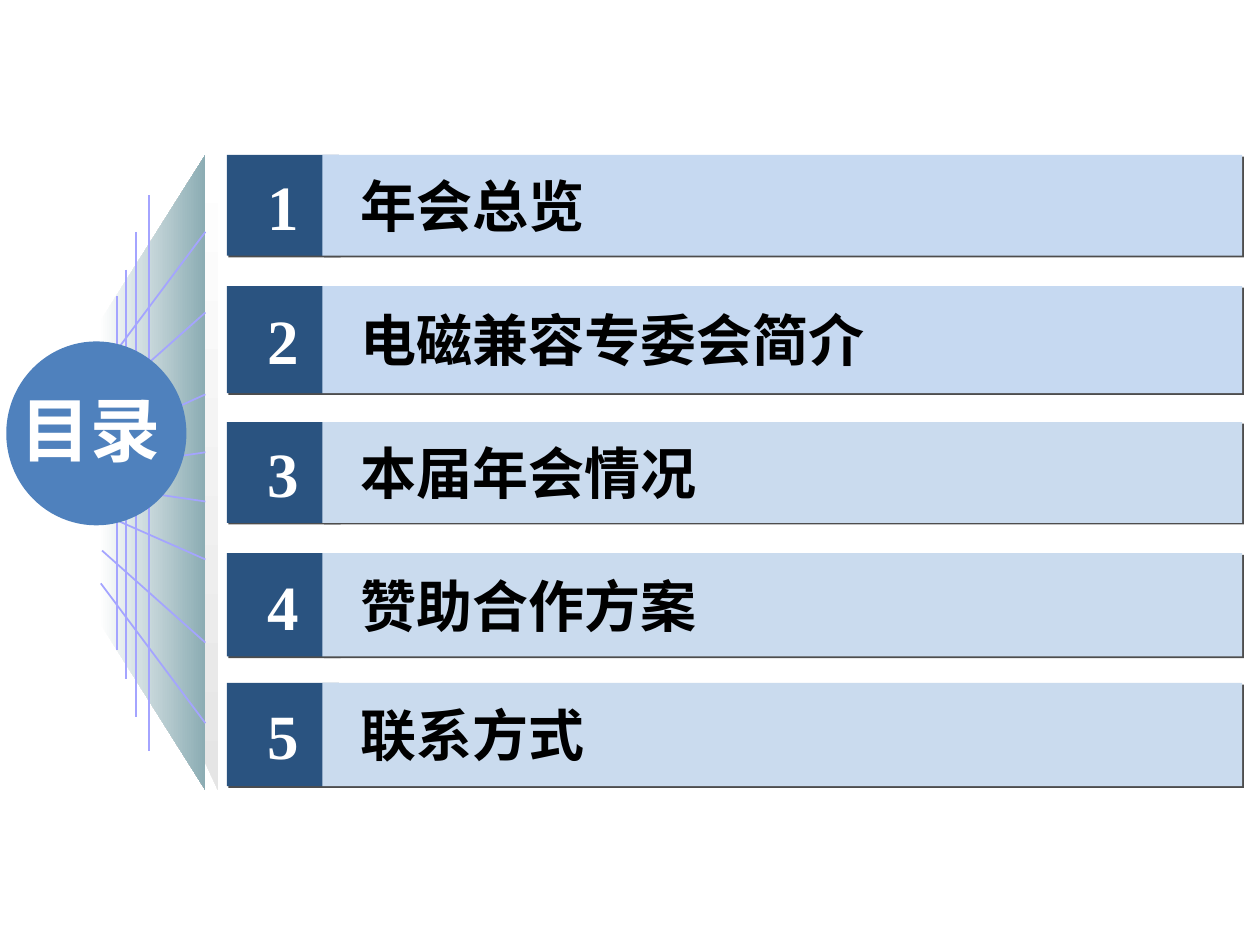
from dataclasses import dataclass

from lxml import etree
from pptx import Presentation
from pptx.dml.color import RGBColor
from pptx.enum.shapes import MSO_CONNECTOR, MSO_SHAPE
from pptx.enum.text import MSO_ANCHOR, MSO_AUTO_SIZE, PP_ALIGN
from pptx.oxml.ns import qn
from pptx.util import Inches, Pt

STRAIGHT = MSO_CONNECTOR.STRAIGHT
OVAL, RECTANGLE = MSO_SHAPE.OVAL, MSO_SHAPE.RECTANGLE
MIDDLE = MSO_ANCHOR.MIDDLE
LEFT, CENTER = PP_ALIGN.LEFT, PP_ALIGN.CENTER
GROW = MSO_AUTO_SIZE.SHAPE_TO_FIT_TEXT


@dataclass(frozen=True)
class Theme:
    white: str = "FFFFFF"
    black: str = "000000"
    navy: str = "2A5380"
    blue: str = "4F81BD"
    sky: str = "C6D9F1"
    mist: str = "CADBEE"
    teal: str = "8BACB3"
    silver: str = "E5E5E5"
    lilac: str = "A4A4FF"
    shadow: str = "4D4D4D"
    cjk_font: str = "Noto Sans CJK SC"
    number_font: str = "Times New Roman"
    title_size: int = 40
    number_size: int = 36
    item_size: int = 32


class SlideBuilder:
    def __init__(self, slide, theme):
        self.slide = slide
        self.theme = theme

    def set_text(self, text_frame, text, font_name, size, color, alignment):
        text_frame.word_wrap = False
        text_frame.text = text
        paragraph = text_frame.paragraphs[0]
        paragraph.alignment = alignment
        run = paragraph.runs[0]
        run.font.size = Pt(size)
        run.font.bold = True
        run.font.color.rgb = RGBColor.from_string(color)
        run.font.name = font_name
        east_asian = etree.SubElement(run._r.get_or_add_rPr(), qn("a:ea"))
        east_asian.set("typeface", font_name)
        return paragraph

    def shape(self, kind, left, top, width, height, color):
        shape = self.slide.shapes.add_shape(
            kind, Inches(left), Inches(top), Inches(width), Inches(height))
        shape.shadow.inherit = False
        shape.fill.solid()
        shape.fill.fore_color.rgb = RGBColor.from_string(color)
        shape.line.fill.background()
        return shape

    def shadow_box(self, left, top, width, height, color):
        shape = self.shape(RECTANGLE, left, top, width, height, color)
        shape.text_frame.vertical_anchor = MIDDLE
        effects = shape._element.spPr.find(qn("a:effectLst"))
        shadow = etree.SubElement(effects, qn("a:outerShdw"), blurRad="0",
                                  dist=str(Pt(1.4)), dir="2700000", algn="ctr",
                                  rotWithShape="0")
        etree.SubElement(shadow, qn("a:srgbClr"), val=self.theme.shadow)
        return shape

    def gradient_outline(self, points, colors, angle):
        corners = [(Inches(x), Inches(y)) for x, y in points]
        outline = self.slide.shapes.build_freeform(*corners[0], scale=1.0)
        outline.add_line_segments(corners[1:], close=True)
        shape = outline.convert_to_shape()
        shape.shadow.inherit = False
        shape.line.fill.background()
        shape.fill.gradient()
        shape.fill.gradient_angle = angle
        for position, (stop, color) in enumerate(zip(shape.fill.gradient_stops, colors)):
            stop.position = position
            stop.color.rgb = RGBColor.from_string(color)

    def line(self, x1, y1, x2, y2):
        connector = self.slide.shapes.add_connector(
            STRAIGHT, Inches(x1), Inches(y1), Inches(x2), Inches(y2))
        connector.line.color.rgb = RGBColor.from_string(self.theme.lilac)
        connector.line.width = Pt(1)
        etree.SubElement(connector._element.spPr, qn("a:effectLst"))

    def title(self, text, left, top, width, height):
        box = self.slide.shapes.add_textbox(
            Inches(left), Inches(top), Inches(width), Inches(height))
        self.set_text(box.text_frame, text, self.theme.cjk_font,
                      self.theme.title_size, self.theme.white, CENTER)
        box.text_frame.auto_size = GROW

    def agenda_row(self, number, text, top, height, color):
        theme = self.theme
        tab = self.shadow_box(1.8, top, 0.89, height, theme.navy)
        self.set_text(tab.text_frame, str(number), theme.number_font,
                      theme.number_size, theme.white, CENTER)
        bar = self.shadow_box(2.56, top, 7.3, height, color)
        paragraph = self.set_text(bar.text_frame, text, theme.cjk_font,
                                  theme.item_size, theme.black, LEFT)
        properties = paragraph._p.get_or_add_pPr()
        properties.set("marL", str(Inches(0.2)))
        properties.set("indent", "0")


def main():
    theme = Theme()
    presentation = Presentation()
    presentation.slide_width = Inches(10)
    presentation.slide_height = Inches(7.5)
    slide = presentation.slides.add_slide(presentation.slide_layouts[6])
    builder = SlideBuilder(slide, theme)

    # Folded panel: thin edge, then the face
    builder.gradient_outline([(1.73, 6.27), (1.6, 5.99), (1.6, 1.51), (1.73, 1.22)],
                             (theme.white, theme.silver), 270)
    builder.gradient_outline([(1.63, 6.27), (0.79, 4.94), (0.79, 2.56), (1.63, 1.23)],
                             (theme.white, theme.teal), 0)

    # Perspective grid: rays to the panel edge, then uprights
    panel_edge = 1.63
    rays = [(0.81, 3.21, 2.48), (0.77, 3.52, 3.13), (0.81, 3.71, 3.59),
            (0.81, 4.37, 5.1), (0.77, 4.06, 4.44), (0.81, 3.86, 3.98),
            (0.8, 2.95, 1.84), (0.8, 4.63, 5.74)]
    for start_x, start_y, edge_y in rays:
        builder.line(start_x, start_y, panel_edge, edge_y)
    uprights = [(1.18, 1.55, 5.96), (1.08, 1.84, 5.69),
                (1, 2.14, 5.39), (0.93, 2.35, 5.16)]
    for x, top, bottom in uprights:
        builder.line(x, top, x, bottom)

    # Title disc
    builder.shape(OVAL, 0.05, 2.71, 1.43, 1.46, theme.blue)
    builder.title("目录", 0.05, 3.02, 1.33, 0.77)

    # Agenda rows
    rows = [("年会总览", 1.23, 0.8, theme.sky),
            ("电磁兼容专委会简介", 2.27, 0.85, theme.sky),
            ("本届年会情况", 3.35, 0.8, theme.mist),
            ("赞助合作方案", 4.39, 0.82, theme.mist),
            ("联系方式", 5.42, 0.82, theme.mist)]
    for number, row in enumerate(rows, start=1):
        builder.agenda_row(number, *row)

    presentation.save("out.pptx")


if __name__ == "__main__":
    main()
